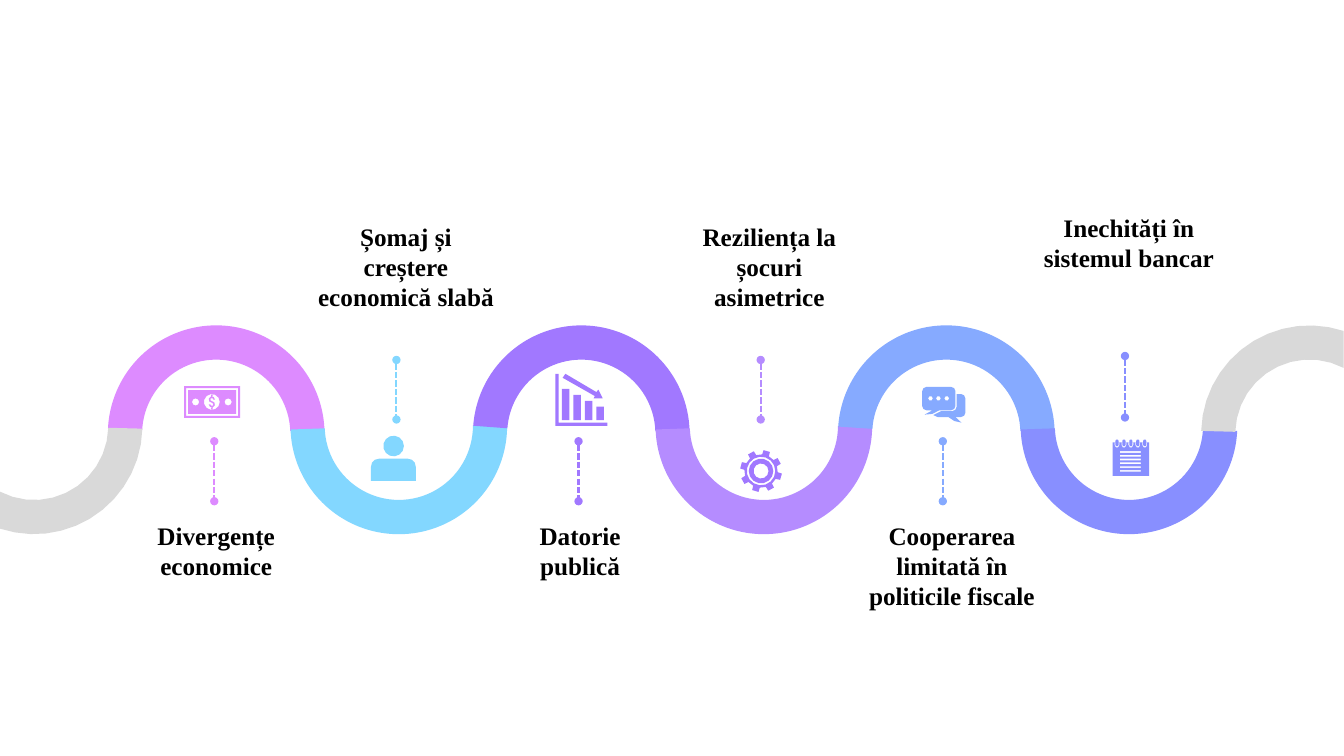
from math import cos, radians, sin, sqrt

from lxml.etree import SubElement
from pptx import Presentation
from pptx.dml.color import RGBColor
from pptx.enum.dml import MSO_LINE
from pptx.enum.shapes import MSO_CONNECTOR, MSO_SHAPE
from pptx.enum.text import PP_ALIGN
from pptx.oxml.ns import qn
from pptx.util import Cm, Pt

PINK, CYAN, VIOLET = "DD8BFF", "83D7FF", "A178FF"
LILAC, BLUE, INDIGO, GREY = "B58CFF", "86AAFF", "888FFF", "D9D9D9"


def paint(fill, colour):
    fill.solid()
    fill.fore_color.rgb = RGBColor.from_string(colour)


def arc(cx, cy, r, start, end):
    """Points in cm along a circle, fewer on small ones; degrees run clockwise from the right."""
    n = max(1, round(abs(end - start) * sqrt(r) / 14))
    angles = [radians(start + (end - start) * i / n) for i in range(n + 1)]
    return [(cx + r * cos(a), cy + r * sin(a)) for a in angles]


prs = Presentation()
prs.slide_width, prs.slide_height = Cm(33.87), Cm(19.05)
s = prs.slides.add_slide(prs.slide_layouts[6])

# text, colour, arc start, label left, top, width, height, line top, line bottom
steps = [
    ("Divergențe economice", PINK, 109.58, 3.1, 12.98, 4.7, 1.8, 11.12, 12.63),
    ("Șomaj și creștere economică slabă", CYAN, 107.75, 7.65, 5.44, 5.16, 2.57, 9.07, 10.57),
    ("Datorie publică", VIOLET, 110.53, 12.27, 12.98, 4.7, 1.8, 11.12, 12.63),
    ("Reziliența la șocuri asimetrice", LILAC, 108.05, 16.81, 5.44, 5.16, 2.57, 9.07, 10.57),
    ("Cooperarea limitată în politicile fiscale", BLUE, 110.26, 21.41, 12.98, 5.16, 2.57,
     11.12, 12.63),
    ("Inechități în sistemul bancar", INDIGO, 109.61, 25.98, 5.21, 4.94, 1.8, 8.97, 10.52),
]

# Wave
for i, (text, colour, start, *rest) in enumerate(steps):
    sp = s.shapes.add_shape(MSO_SHAPE.BLOCK_ARC, Cm(2.72 + 4.6 * i),
                            Cm(8.0 if i % 2 else 8.2), Cm(5.46), Cm(5.46))
    sp.rotation = 180 * (i % 2)
    for n, value in enumerate((start, 214.84, 0.158)):
        sp.adjustments[n] = value
    sp.shadow.inherit = False
    paint(sp.fill, colour)
    sp.line.fill.background()

# Labels and dotted lines
for i, (text, colour, start, left, top, width, height, y1, y2) in enumerate(steps):
    tf = s.shapes.add_textbox(Cm(left), Cm(top), Cm(width), Cm(height)).text_frame
    frame = {"word_wrap": True, "margin_left": Cm(0.3), "margin_right": Cm(0.3),
             "margin_top": Cm(0.13), "margin_bottom": Cm(0.13)}
    for name, value in frame.items():
        setattr(tf, name, value)
    p = tf.paragraphs[0]
    p.alignment = PP_ALIGN.CENTER
    r = p.add_run()
    r.text = text
    for name, value in {"name": "Times New Roman", "size": Pt(18), "bold": True}.items():
        setattr(r.font, name, value)
    paint(r.font.fill, "000000")

    x = Cm(5.4 + 4.59 * i)
    c = s.shapes.add_connector(MSO_CONNECTOR.STRAIGHT, x, Cm(y1), x, Cm(y2))
    paint(c.line.fill, colour)
    c.line.width = Pt(1.5)
    c.line.dash_style = MSO_LINE.SQUARE_DOT
    spPr = c.element.spPr
    for end in ("a:headEnd", "a:tailEnd"):
        SubElement(spPr.find(qn("a:ln")), qn(end), type="oval")
    SubElement(spPr, qn("a:effectLst"))

# Each outline: colour, boxes (left, top, right, bottom), other contours
outlines = [
    (GREY, [], [arc(cx, cy, 2.73, turn + 1.5, turn + 108.4)
                + arc(cx, cy, 1.87, turn + 117.4, turn + 1.5)])
    for cx, cy, turn in ((0.86, 10.73, 0), (33.0, 10.93, 180))
]

dollar = (arc(5.34, 10.07, 0.08, 0, -270) + arc(5.34, 10.19, 0.04, -90, 180)
          + arc(5.34, 10.19, 0.08, 180, -90) + arc(5.34, 10.07, 0.04, -270, 0))
outlines.append((
    PINK,
    [(4.64, 9.73, 6.05, 10.53), (4.69, 9.78, 6.0, 10.48), (4.74, 9.83, 5.95, 10.43),
     (5.32, 9.95, 5.36, 9.99), (5.32, 10.27, 5.36, 10.31)],
    [dollar] + [arc(x, 10.13, r, 0, 360) for x, r in ((4.93, 0.09), (5.34, 0.2), (5.75, 0.09))],
))

body = (arc(9.55, 11.76, 0.2, 180, 270) + arc(10.28, 11.76, 0.2, 270, 360)
        + [(10.48, 12.12), (9.35, 12.12)])
outlines.append((CYAN, [], [body, arc(9.92, 11.24, 0.26, 0, 360)]))

axes = [(14.0, 9.42), (14.08, 9.42), (14.08, 10.65), (15.31, 10.65), (15.31, 10.73), (14.0, 10.73)]
falling_arrow = [(14.25, 9.42), (15.03, 9.88), (15.08, 9.82), (15.19, 10.04),
                 (14.96, 10.04), (14.99, 9.98), (14.18, 9.52)]
bars = [(14.16 + 0.29 * i, 9.8 + 0.15 * i, 14.35 + 0.29 * i, 10.59) for i in range(4)]
outlines.append((VIOLET, bars, [axes, falling_arrow]))

gear = []
for a in range(-74, 286, 45):
    gear += arc(19.18, 11.87, 0.53, a - 9, a + 9) + arc(19.18, 11.87, 0.42, a + 12, a + 33)
outlines.append((VIOLET, [], [gear] + [arc(19.18, 11.87, r, 0, 360) for r in (0.36, 0.31, 0.19)]))

front_bubble = (arc(23.35, 9.86, 0.11, 180, 270) + arc(23.97, 9.86, 0.11, 270, 360)
                + arc(23.97, 10.23, 0.11, 0, 90)
                + [(23.67, 10.34), (23.5, 10.43), (23.3, 10.45), (23.5, 10.34)]
                + arc(23.35, 10.23, 0.11, 90, 180))
back_bubble = ([(24.11, 9.93)] + arc(24.22, 10.04, 0.11, 270, 360)
               + arc(24.22, 10.4, 0.11, 0, 90)
               + [(24.08, 10.51), (24.23, 10.65), (24.05, 10.61), (23.9, 10.51),
                  (23.63, 10.51), (23.52, 10.46), (23.72, 10.36)]
               + arc(24.0, 10.25, 0.11, 90, 0))
dots = [arc(x, 10.04, 0.06, 0, 360) for x in (23.45, 23.65, 23.86)]
outlines.append((BLUE, [], [front_bubble, back_bubble] + dots))

ruled = [(28.22, 11.37 + 0.095 * i, 28.75, 11.41 + 0.095 * i) for i in range(6)]
binding = []
for i in range(5):
    x = 28.15 + 0.175 * i
    binding.append([(x - 0.06, 11.15)] + arc(x, 11.22, 0.06, 180, 0) + [(x + 0.06, 11.15)])
    binding.append(arc(x, 11.11, 0.04, 180, 360) + arc(x, 11.21, 0.04, 0, 180))
outlines.append((INDIGO, [(28.04, 11.15, 28.96, 11.99)] + ruled, binding))

for colour, boxes, contours in outlines:
    corners = [[(l, t), (r, t), (r, b), (l, b)] for l, t, r, b in boxes]
    paths = [[(Cm(x), Cm(y)) for x, y in points] for points in corners + contours]
    builder = s.shapes.build_freeform(*paths[0][0])
    for i, points in enumerate(paths):
        if i:
            builder.move_to(*points[0])
        builder.add_line_segments(points[1:], close=True)
    sp = builder.convert_to_shape()
    sp.shadow.inherit = False
    paint(sp.fill, colour)
    sp.line.fill.background()

prs.save("out.pptx")
